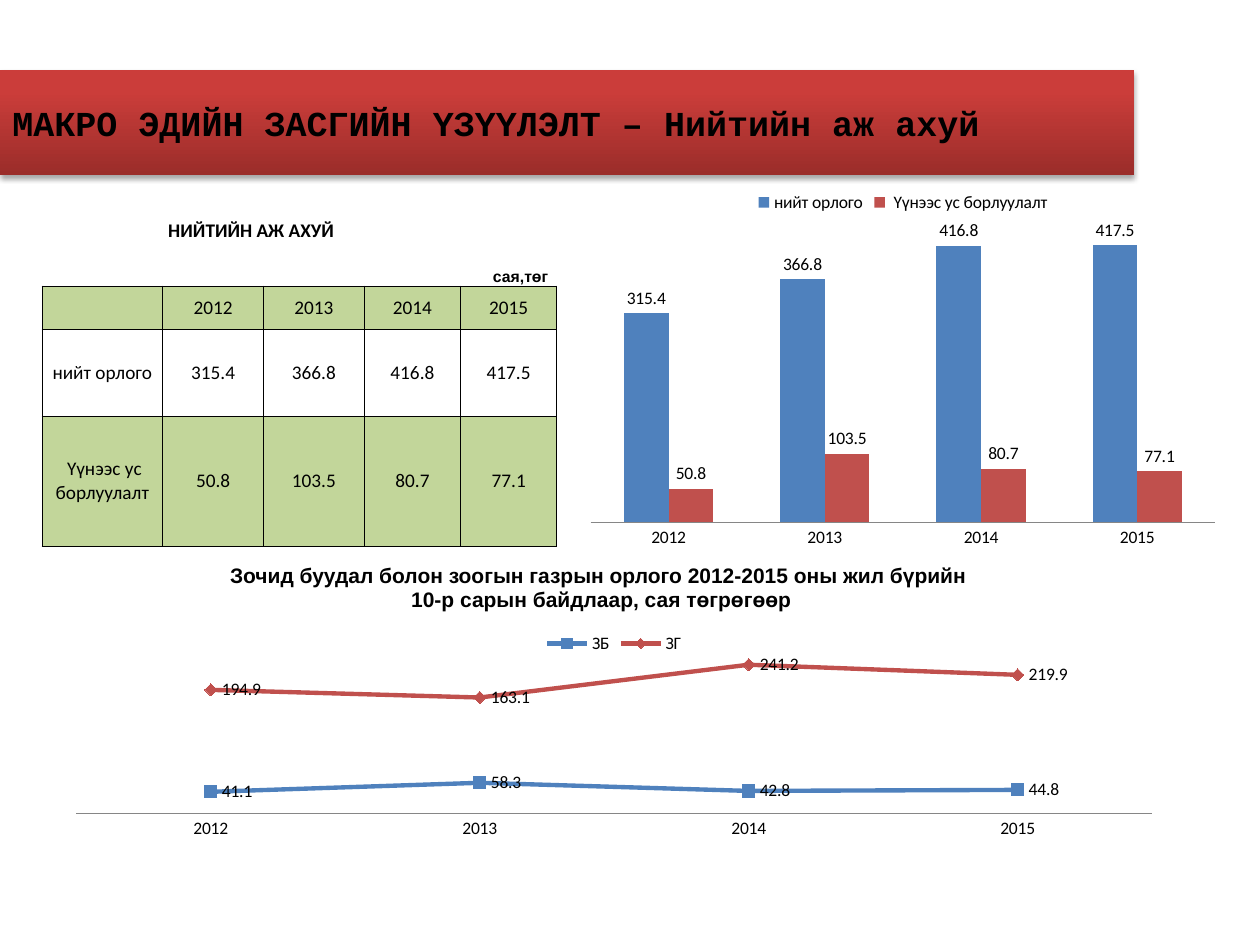
import pptx
import pptx.chart.data
import pptx.dml.color
import pptx.enum.chart
import pptx.enum.dml
import pptx.enum.shapes
import pptx.enum.text
import pptx.oxml
import pptx.oxml.ns
import pptx.util
from pptx.enum.chart import XL_CHART_TYPE, XL_MARKER_STYLE
from pptx.enum.text import MSO_ANCHOR, PP_ALIGN

Pt = pptx.util.Pt
RGBColor = pptx.dml.color.RGBColor

BLACK = RGBColor(0x00, 0x00, 0x00)
GREEN = RGBColor(0xC2, 0xD6, 0x9A)
BLUE = RGBColor(0x4F, 0x81, 0xBD)
RED = RGBColor(0xC0, 0x50, 0x4D)
BANNER_DARK = RGBColor(0x9B, 0x2D, 0x2A)
BANNER_LIGHT = RGBColor(0xCB, 0x3D, 0x3A)
AXIS_GREY = RGBColor(0x86, 0x86, 0x86)

PLAIN_TABLE_STYLE = "{2D5ABB26-0587-4C30-8999-92F81FD0307C}"
YEARS = ["2012", "2013", "2014", "2015"]
INCOME = [("нийт орлого", [315.4, 366.8, 416.8, 417.5]),
          (" Үүнээс ус борлуулалт", [50.8, 103.5, 80.7, 77.1])]
HOTELS = [("ЗБ", [41.1, 58.3, 42.8, 44.8]),
          ("ЗГ", [194.9, 163.1, 241.2, 219.9])]


def set_font(font, size, name="Calibri", bold=False):
    font.size, font.name, font.bold = Pt(size), name, bold
    font.color.rgb = BLACK


def parse_drawing(tag, content, attributes=""):
    namespace = pptx.oxml.ns.nsdecls("a")
    return pptx.oxml.parse_xml(
        f"<a:{tag} {namespace} {attributes}>{content}</a:{tag}>")


def add_banner(slide, title):
    banner = slide.shapes.add_shape(
        pptx.enum.shapes.MSO_SHAPE.RECTANGLE, 0, Pt(40), Pt(648), Pt(60))
    banner.line.fill.background()
    banner.fill.gradient()
    banner.fill.gradient_angle = 90
    stops = banner.fill.gradient_stops
    for stop, color, position in zip(stops, (BANNER_DARK, BANNER_LIGHT), (0, 0.8)):
        stop.color.rgb, stop.position = color, position
    banner._element.spPr.append(parse_drawing(
        "effectLst",
        '<a:outerShdw blurRad="40000" dist="23000" dir="5400000" rotWithShape="0">'
        '<a:srgbClr val="000000"><a:alpha val="35000"/></a:srgbClr></a:outerShdw>'))
    frame = banner.text_frame
    frame.word_wrap = True
    frame.vertical_anchor = MSO_ANCHOR.MIDDLE
    paragraph = frame.paragraphs[0]
    paragraph.text = title
    paragraph.alignment = PP_ALIGN.JUSTIFY
    properties = paragraph._p.get_or_add_pPr()
    properties.set("marL", str(Pt(40)))
    properties.set("indent", str(Pt(-40)))
    set_font(paragraph.font, 20, "Courier New", True)


def add_table(slide, left, top, widths, heights):
    """Add an unstyled table whose cells have no margins."""
    table = slide.shapes.add_table(
        len(heights), len(widths), Pt(left), Pt(top),
        Pt(sum(widths)), Pt(sum(heights))).table
    table.first_row = table.horz_banding = False
    table._tbl.tblPr.find(pptx.oxml.ns.qn("a:tableStyleId")).text = PLAIN_TABLE_STYLE
    for column, width in zip(table.columns, widths):
        column.width = Pt(width)
    for row, height in zip(table.rows, heights):
        row.height = Pt(height)
    for cell in table.iter_cells():
        fill_cell(cell, "")
    return table


def fill_cell(cell, text, size=11, name="Calibri", bold=False,
              align=PP_ALIGN.CENTER, anchor=MSO_ANCHOR.MIDDLE):
    cell.margin_left = cell.margin_right = cell.margin_top = cell.margin_bottom = 0
    cell.vertical_anchor = anchor
    cell.text = text
    for paragraph in cell.text_frame.paragraphs:
        paragraph.alignment = align
        set_font(paragraph.font, size, name, bold)


def outline_cell(cell):
    properties = cell._tc.get_or_add_tcPr()
    for index, side in enumerate(("lnL", "lnR", "lnT", "lnB")):
        properties.insert(index, parse_drawing(
            side, f'<a:solidFill><a:srgbClr val="{BLACK}"/></a:solidFill>',
            f'w="{Pt(0.5)}"'))


def add_income_table(slide):
    table = add_table(slide, 24, 114, [69, 57.6, 57.6, 55, 55],
                      [24.75, 24.75, 24.75, 49.5, 74.25])
    table.cell(0, 0).merge(table.cell(0, 3))
    fill_cell(table.cell(0, 0), "НИЙТИЙН АЖ АХУЙ", bold=True, anchor=MSO_ANCHOR.BOTTOM)
    unit = table.cell(1, 4)
    fill_cell(unit, "сая,төг", 9, "Arial", True, PP_ALIGN.RIGHT, MSO_ANCHOR.BOTTOM)
    unit.margin_right = Pt(5)
    rows = [["", *YEARS]] + [[label, *map(str, values)] for label, values in INCOME]
    for r, row in enumerate(rows):
        for c, text in enumerate(row):
            cell = table.cell(r + 2, c)
            fill_cell(cell, text)
            if r % 2 == 0:
                cell.fill.solid()
                cell.fill.fore_color.rgb = GREEN
            outline_cell(cell)


def add_hotel_heading(slide):
    table = add_table(slide, 36, 312, [612], [48])
    fill_cell(table.cell(0, 0),
              "Зочид буудал болон зоогын газрын орлого 2012-2015 оны жил бүрийн\n"
              " 10-р сарын байдлаар, сая төгрөгөөр", 12, "Arial", True)


def add_year_chart(slide, kind, box, series, maximum, plot_area):
    """Add a chart over the years; plot_area is x, y, w, h as shares of box."""
    data = pptx.chart.data.CategoryChartData()
    data.categories = YEARS
    for name, values in series:
        data.add_series(name, values)
    chart = slide.shapes.add_chart(kind, *map(Pt, box), data).chart
    set_font(chart.font, 10)
    chart.has_title = False
    chart.has_legend = True
    chart.legend.position = pptx.enum.chart.XL_LEGEND_POSITION.TOP
    chart.legend.include_in_layout = False
    value_axis = chart.value_axis
    value_axis.visible = value_axis.has_major_gridlines = False
    value_axis.minimum_scale, value_axis.maximum_scale = 0, maximum
    year_axis = chart.category_axis
    year_axis.major_tick_mark = pptx.enum.chart.XL_TICK_MARK.NONE
    year_axis.format.line.color.rgb = AXIS_GREY
    year_axis.format.line.width = Pt(0.75)
    set_plot_layout(chart, plot_area)
    for one_series in chart.plots[0].series:
        one_series.data_labels.show_value = True
    return chart


def set_plot_layout(chart, plot_area):
    sizes = "".join(f'<c:{tag} val="{value}"/>' for tag, value in zip("xywh", plot_area))
    layout = pptx.oxml.parse_xml(
        f'<c:layout {pptx.oxml.ns.nsdecls("c")}><c:manualLayout>'
        '<c:layoutTarget val="inner"/><c:xMode val="edge"/><c:yMode val="edge"/>'
        f"{sizes}</c:manualLayout></c:layout>")
    area = chart._chartSpace.chart.plotArea
    for old in area.findall(pptx.oxml.ns.qn("c:layout")):
        area.remove(old)
    area.insert(0, layout)


def add_income_chart(slide):
    chart = add_year_chart(slide, XL_CHART_TYPE.COLUMN_CLUSTERED, (330, 102, 372, 216),
                           INCOME, 450, (0.02, 0.12, 0.96, 0.79))
    plot = chart.plots[0]
    plot.vary_by_categories = False
    plot.gap_width, plot.overlap = 150, 0
    for series, color in zip(plot.series, (BLUE, RED)):
        series.format.fill.solid()
        series.format.fill.fore_color.rgb = color
        series.data_labels.position = pptx.enum.chart.XL_LABEL_POSITION.OUTSIDE_END


def add_hotel_chart(slide):
    chart = add_year_chart(slide, XL_CHART_TYPE.LINE_MARKERS_STACKED, (24, 354, 654, 132),
                           HOTELS, 300, (0.03, 0.16, 0.94, 0.68))
    markers = (XL_MARKER_STYLE.SQUARE, XL_MARKER_STYLE.DIAMOND)
    for series, color, marker in zip(chart.plots[0].series, (BLUE, RED), markers):
        series.smooth = False
        series.format.line.color.rgb = color
        series.format.line.width = Pt(2.5)
        series.marker.style, series.marker.size = marker, 7
        series.marker.format.fill.solid()
        series.marker.format.fill.fore_color.rgb = color
        series.marker.format.line.color.rgb = color
        series.data_labels.position = pptx.enum.chart.XL_LABEL_POSITION.RIGHT


def main():
    presentation = pptx.Presentation()
    presentation.slide_width, presentation.slide_height = Pt(720), Pt(540)
    slide = presentation.slides.add_slide(presentation.slide_layouts[6])
    add_hotel_heading(slide)
    add_banner(slide, "МАКРО ЭДИЙН ЗАСГИЙН ҮЗҮҮЛЭЛТ – Нийтийн аж ахуй")
    add_income_table(slide)
    add_income_chart(slide)
    add_hotel_chart(slide)
    presentation.save("out.pptx")


if __name__ == "__main__":
    main()
